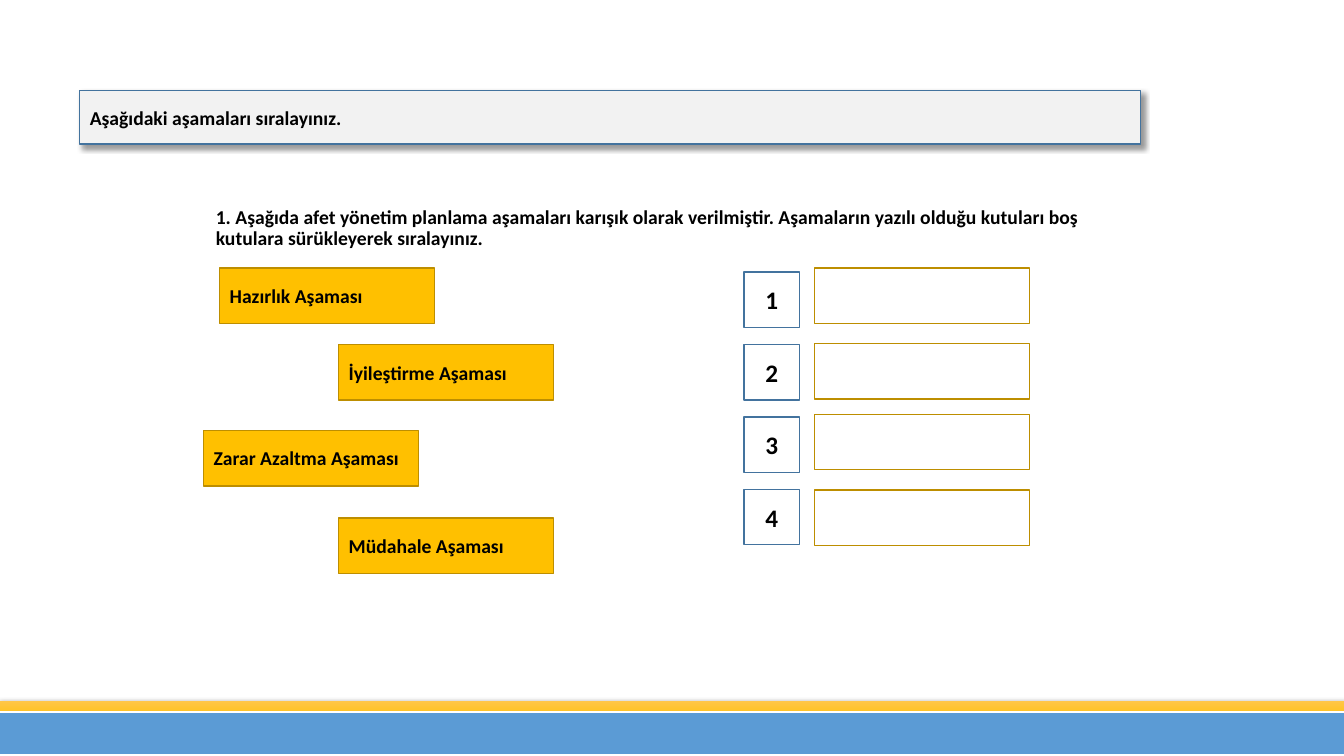
from dataclasses import dataclass

from lxml.etree import SubElement
from pptx import Presentation
from pptx.dml.color import RGBColor as RGB
from pptx.enum.shapes import MSO_SHAPE as SHAPE
from pptx.enum.text import MSO_ANCHOR as ANCHOR, MSO_AUTO_SIZE as AUTOSIZE, PP_ALIGN as ALIGN
from pptx.oxml import parse_xml
from pptx.oxml.ns import nsdecls, qn
from pptx.util import Inches, Pt


@dataclass(frozen=True)
class Theme:
    """Colours, type sizes and font of the slide."""
    font: str = "Calibri"
    text: str = "000000"
    panel: str = "F2F2F2"
    outline: str = "43739E"
    card: str = "FFC000"
    card_edge: str = "BD8E00"
    stripe: tuple = ((0, "FFC64B"), (50, "FFC000"), (100, "E3AB00"))
    footer: str = "5B9BD5"
    white: str = "FFFFFF"
    body_size: int = 14
    number_size: int = 18


def write(tf, text, size, color, font, align=None, anchor=ANCHOR.MIDDLE, spacing=1.0, before=0):
    """Write one bold paragraph into a text frame."""
    tf.word_wrap = True
    tf.auto_size = AUTOSIZE.NONE
    tf.vertical_anchor = anchor
    p = tf.paragraphs[0]
    p.alignment, p.line_spacing, p.space_before = align, spacing, Pt(before)
    r = p.add_run()
    r.text = text
    r.font.name, r.font.size, r.font.bold = font, Pt(size), True
    r.font.color.rgb = RGB.from_string(color)
    return p


class Board:
    """Draws elements on a slide using a grid of tenth-inch columns and rows."""

    def __init__(self, prs, theme):
        """Add a title and content slide."""
        self.theme = theme
        self.slide = prs.slides.add_slide(prs.slide_layouts[1])

    def place(self, sp, col, row, cols, rows):
        """Move a shape to a grid cell."""
        sp.left, sp.top, sp.width, sp.height = (Inches(n / 10) for n in (col, row, cols, rows))

    def paint(self, sp, fill=None, line=None, width=1):
        """Set the fill and outline of a shape."""
        if fill:
            sp.fill.solid()
            sp.fill.fore_color.rgb = RGB.from_string(fill)
        else:
            sp.fill.background()
        if line:
            sp.line.color.rgb = RGB.from_string(line)
            sp.line.width = Pt(width)
        else:
            sp.line.fill.background()

    def shade(self, sp, alpha, blur, dist, angle):
        """Give a shape a black outer shadow."""
        sp.shadow.inherit = False
        effects = sp._element.spPr.find(qn("a:effectLst"))
        shadow = SubElement(effects, qn("a:outerShdw"), blurRad=str(Pt(blur)), dist=str(Pt(dist)),
                            dir=str(angle * 60000), algn="tl", rotWithShape="0")
        color = SubElement(shadow, qn("a:srgbClr"), val="000000")
        SubElement(color, qn("a:alpha"), val=str(alpha * 1000))

    def text(self, sp, text, size=None, **fmt):
        """Write text in the theme's style."""
        t = self.theme
        return write(sp.text_frame, text, size or t.body_size, t.text, t.font, **fmt)

    def title(self, text, *cell):
        """Turn the title placeholder into the heading panel."""
        sp = self.slide.shapes.title
        self.place(sp, *cell)
        self.paint(sp, self.theme.panel, self.theme.outline)
        self.shade(sp, 40, 4, 3, 45)
        self.text(sp, text, align=ALIGN.JUSTIFY)

    def question(self, text, *cell):
        """Write the question in the body placeholder without a bullet."""
        sp = self.slide.placeholders[1]
        self.place(sp, *cell)
        p = self.text(sp, text, anchor=ANCHOR.TOP, spacing=0.9, before=10)
        pPr = p._p.get_or_add_pPr()
        pPr.set("marL", "0")
        pPr.set("indent", "0")
        SubElement(pPr, qn("a:buNone"))

    def box(self, *cell, text=None, fill=None, line=None, width=1, parent=None, **fmt):
        """Add a rectangle with optional text."""
        shapes = (parent or self.slide).shapes
        sp = shapes.add_shape(SHAPE.RECTANGLE, *(Inches(n / 10) for n in cell))
        sp.shadow.inherit = False
        self.paint(sp, fill, line, width)
        if text:
            self.text(sp, text, **fmt)
        return sp

    def footer(self):
        """Add the gradient stripe and the blue band as one group."""
        t = self.theme
        group = self.slide.shapes.add_group_shape()
        stripe = self.box(0, 69.5, 133.3, 4.3, fill=t.card, parent=group)
        stops = "".join(f'<a:gs pos="{pos * 1000}"><a:srgbClr val="{color}"/></a:gs>'
                        for pos, color in t.stripe)
        spPr = stripe._element.spPr
        spPr.replace(spPr.find(qn("a:solidFill")), parse_xml(
            f'<a:gradFill {nsdecls("a")}><a:gsLst>{stops}</a:gsLst>'
            '<a:lin ang="5400000" scaled="0"/></a:gradFill>'))
        self.shade(stripe, 63, 4.5, 1.5, 90)
        self.box(-0.3, 70.6, 133.7, 4.3, fill=t.footer, line=t.white, width=1.5, parent=group)


def main():
    """Build and save the ordering exercise."""
    prs = Presentation()
    prs.slide_width, prs.slide_height = Inches(13.33), Inches(7.5)
    t = Theme()
    board = Board(prs, t)
    board.title("Aşağıdaki aşamaları sıralayınız.", 7.9, 9, 105.2, 5.3)
    board.question("1. Aşağıda afet yönetim planlama aşamaları karışık olarak verilmiştir. "
                   "Aşamaların yazılı olduğu kutuları boş kutulara sürükleyerek sıralayınız.",
                   20.4, 20.1, 90.4, 56)
    cards = (("Hazırlık Aşaması", 21.8, 26.6), ("İyileştirme Aşaması", 33.6, 34.2),
             ("Zarar Azaltma Aşaması", 20.2, 42.7), ("Müdahale Aşaması", 33.6, 51.4))
    for text, col, row in cards:
        board.box(col, row, 21.3, 5.5, text=text, fill=t.card, line=t.card_edge,
                  align=ALIGN.JUSTIFY)
    for i, row in enumerate((26.6, 34.1, 41.1, 48.6)):
        board.box(80.8, row, 21.3, 5.5, line=t.card_edge)
        board.box(73.8, 27 + 7.18 * i, 5.5, 5.5, text=str(i + 1), line=t.outline,
                  size=t.number_size, align=ALIGN.CENTER)
    board.footer()
    prs.save("out.pptx")


if __name__ == "__main__":
    main()
